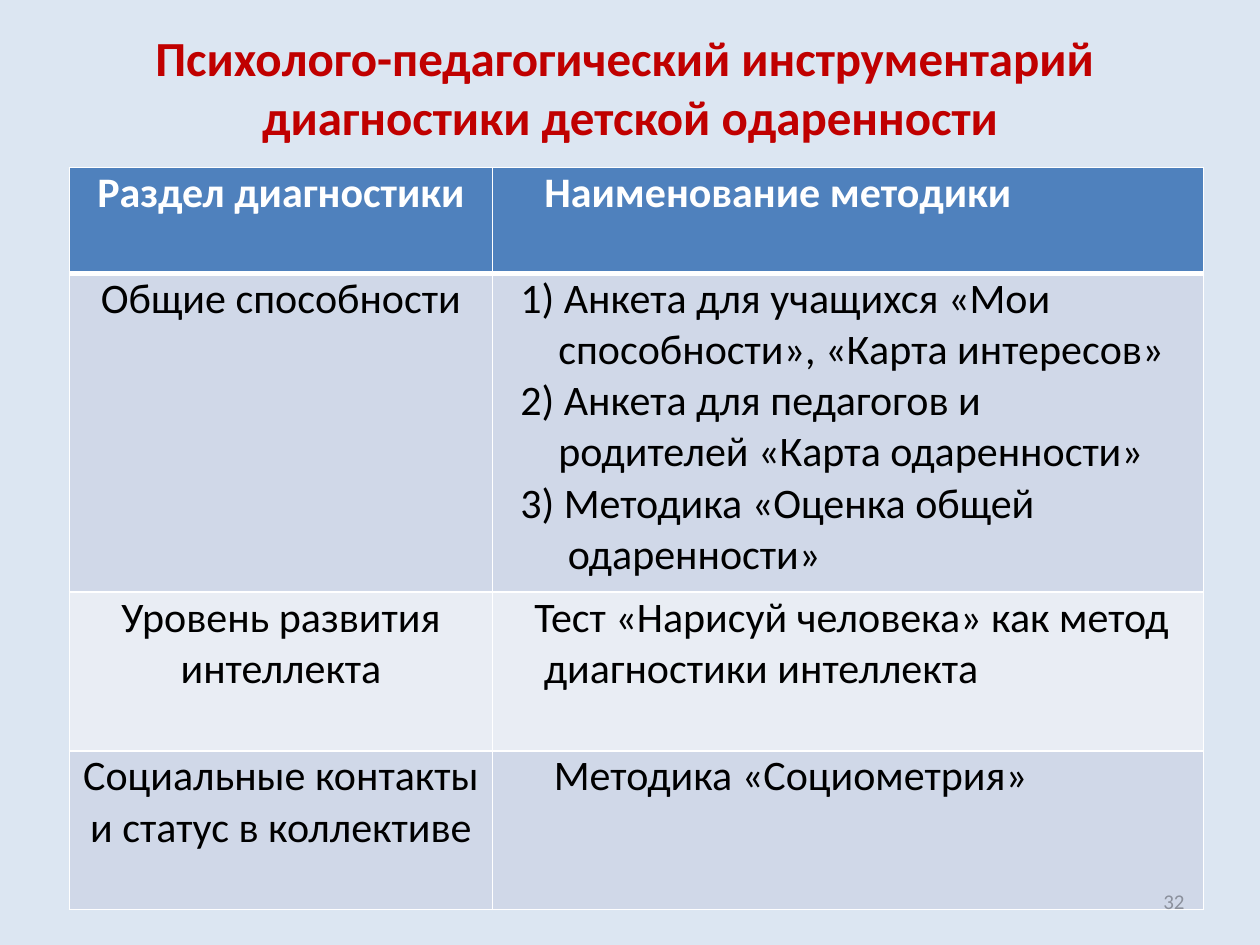
from typing import NamedTuple

from pptx import Presentation
from pptx.dml.color import RGBColor as RGB
from pptx.enum.text import MSO_ANCHOR as Anchor, PP_ALIGN as Align
from pptx.oxml import parse_xml
from pptx.oxml.ns import nsdecls
from pptx.util import Pt

FONT = "Calibri"
COLORS = {
    "background": "DCE6F2",
    "title": "C00000",
    "header": "4F81BD",
    "band_dark": "D0D8E8",
    "band_light": "E9EDF4",
    "white": "FFFFFF",
    "text": "000000",
    "number": "8B909C",
}
COL_WIDTHS = (241.92, 406.08)
ROW_HEIGHTS = (60.48, 182.16, 90.72, 90.72)
THIN, THICK = 1, 3


class Line(NamedTuple):
    text: str
    indent: float = 0


class Row(NamedTuple):
    section: str
    methods: tuple[Line, ...]
    fill: str


ROWS = (
    Row("Раздел диагностики", (Line("Наименование методики", 27.4),), "header"),
    Row("Общие способности", (
        Line("1) Анкета для учащихся «Мои", 13.7),
        Line("способности», «Карта интересов»", 35.4),
        Line("2) Анкета для педагогов и", 13.7),
        Line("родителей «Карта одаренности»", 35.4),
        Line("3) Методика «Оценка общей", 13.7),
        Line("одаренности»", 40.8),
    ), "band_dark"),
    Row("Уровень развития интеллекта", (
        Line("Тест «Нарисуй человека» как метод", 21.7),
        Line("диагностики интеллекта", 27.1),
    ), "band_light"),
    Row("Социальные контакты и статус в коллективе",
        (Line("Методика «Социометрия»", 32.8),), "band_dark"),
)


def color(name: str) -> RGB:
    return RGB.from_string(COLORS[name])


def add_run(p, text: str, size: float, color_name: str, bold: bool = False) -> None:
    r = p.add_run()
    r.text = text
    r.font.name = FONT
    r.font.size = Pt(size)
    r.font.bold = bold
    r.font.color.rgb = color(color_name)


def add_text_box(s, left: float, top: float, width: float, height: float, align: Align):
    """Add a wrapped, vertically centred box and return its text frame."""
    tf = s.shapes.add_textbox(Pt(left), Pt(top), Pt(width), Pt(height)).text_frame
    tf.word_wrap = True
    tf.vertical_anchor = Anchor.MIDDLE
    tf.paragraphs[0].alignment = align
    return tf


def set_borders(cell, top: float, bottom: float) -> None:
    tc_pr = cell._tc.get_or_add_tcPr()
    for side, width in (("L", THIN), ("R", THIN), ("T", top), ("B", bottom)):
        tc_pr.append(parse_xml(
            f'<a:ln{side} {nsdecls("a")} w="{Pt(width)}"><a:solidFill>'
            f'<a:srgbClr val="{COLORS["white"]}"/></a:solidFill></a:ln{side}>'))


def fill_cell(cell, lines: tuple[Line, ...], align: Align, fill: str) -> None:
    cell.margin_left = cell.margin_right = Pt(2.16)
    cell.margin_top = cell.margin_bottom = Pt(0)
    cell.fill.solid()
    cell.fill.fore_color.rgb = color(fill)
    is_header = fill == "header"
    tf = cell.text_frame
    for i, line in enumerate(lines):
        p = tf.add_paragraph() if i else tf.paragraphs[0]
        p.alignment = align
        if line.indent:
            p._p.get_or_add_pPr().set("marL", str(Pt(line.indent)))
        add_run(p, line.text, 24, "white" if is_header else "text", is_header)


def add_methods_table(s) -> None:
    table = s.shapes.add_table(
        len(ROWS), len(COL_WIDTHS), Pt(39.6), Pt(95.76),
        Pt(sum(COL_WIDTHS)), Pt(sum(ROW_HEIGHTS))).table
    table.horz_banding = False
    for column, width in zip(table.columns, COL_WIDTHS):
        column.width = Pt(width)
    for i, (row, height) in enumerate(zip(ROWS, ROW_HEIGHTS)):
        table.rows[i].height = Pt(height)
        contents = (((Line(row.section),), Align.CENTER), (row.methods, Align.LEFT))
        for j, (lines, align) in enumerate(contents):
            cell = table.cell(i, j)
            set_borders(cell, THICK if i == 1 else THIN, THICK if i == 0 else THIN)
            fill_cell(cell, lines, align, row.fill)


def main() -> None:
    prs = Presentation()
    prs.slide_width, prs.slide_height = Pt(720), Pt(540)
    s = prs.slides.add_slide(prs.slide_layouts[6])
    s.background.fill.solid()
    s.background.fill.fore_color.rgb = color("background")

    title = add_text_box(s, 36, 21.6, 648, 90, Align.CENTER)
    title.margin_bottom = Pt(37.8)
    p = title.paragraphs[0]
    add_run(p, "Психолого-педагогический инструментарий ", 28, "title", True)
    p.add_line_break()
    add_run(p, "диагностики детской одаренности", 28, "title", True)

    add_methods_table(s)

    number = add_text_box(s, 516.24, 500.4, 167.76, 28.8, Align.RIGHT)
    add_run(number.paragraphs[0], "32", 12, "number")
    prs.save("out.pptx")


if __name__ == "__main__":
    main()
